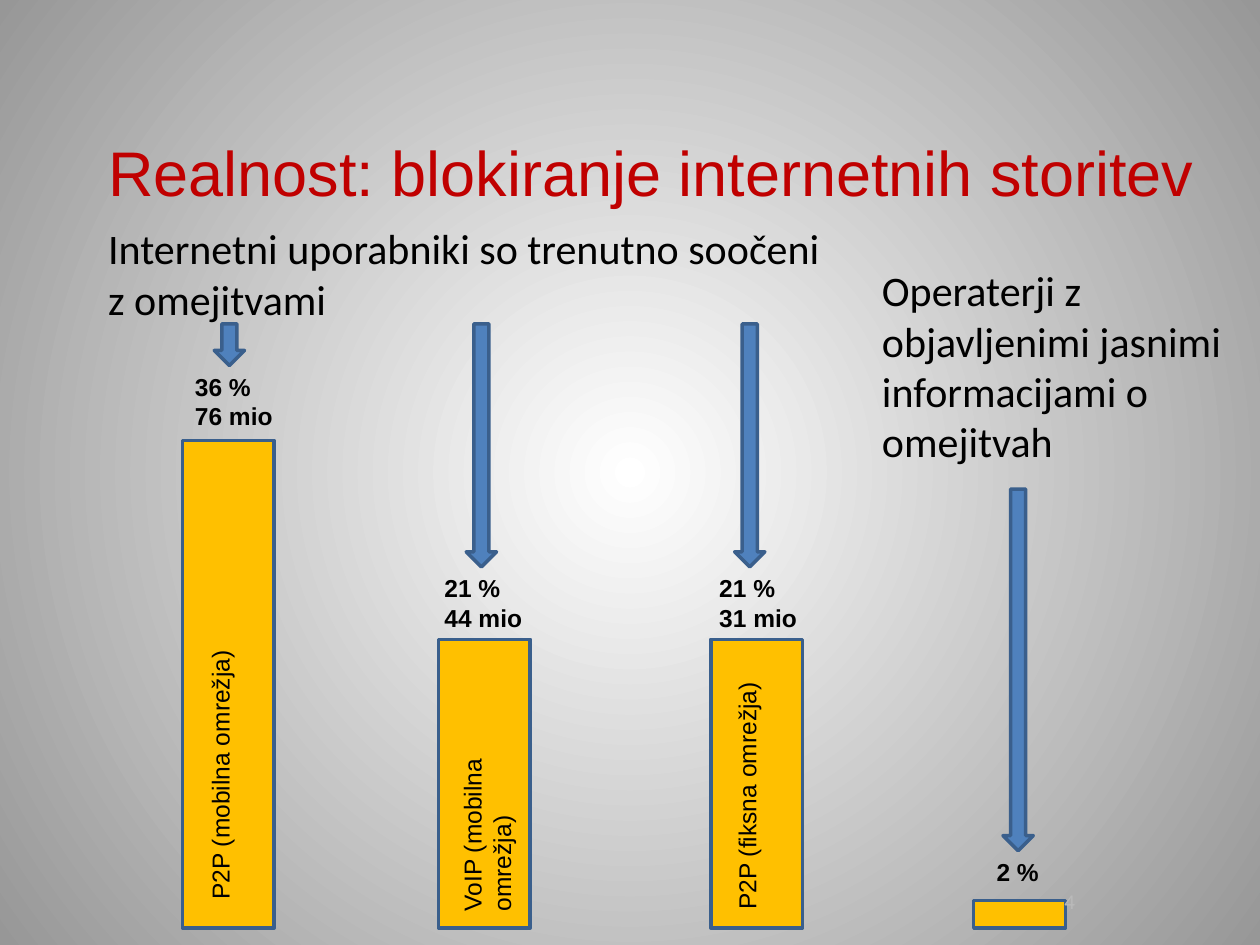
from collections import namedtuple

from lxml.etree import SubElement
from pptx import Presentation
from pptx.dml.color import RGBColor
from pptx.enum.shapes import MSO_SHAPE
from pptx.enum.text import MSO_ANCHOR, MSO_AUTO_SIZE, PP_ALIGN
from pptx.oxml.ns import qn
from pptx.util import Cm, Pt

BLACK, RED, GREY = "000000", "C00000", "BABABA"
GOLD, BLUE, OUTLINE = "FFC000", "4F81BD", "3A5F8C"
BASELINE = 18.71
BAR_WIDTH = 1.85
ARROW_WIDTH = 0.61

# Offsets are measured from the left edge of the column's bar, in cm.
Column = namedtuple(
    "Column",
    "left height arrow_offset arrow_top arrow_height "
    "figures figures_offset figures_size name name_offset name_bottom name_length")

COLUMNS = [
    Column(3.68, 9.83, 0.64, 6.53, 0.84, ["36 %", "76 mio"], 0, (2.08, 1.45),
           "P2P (mobilna omrežja)", 0.33, 18.39, 5.92),
    Column(8.84, 5.82, 0.56, 6.53, 4.90, ["21 %", "44 mio"], -0.13, (2.08, 1.45),
           "VoIP (mobilna omrežja)", 0.25, 18.62, 5.41),
    Column(14.33, 5.82, 0.48, 6.53, 4.90, ["21 %", "31 mio"], -0.08, (2.08, 1.45),
           "P2P (fiksna omrežja)", 0.30, 18.59, 5.41),
    Column(19.63, 0.56, 0.59, 9.86, 7.29, ["2 %"], 0.21, (1.37, 0.86),
           None, 0, 0, 0),
]


def rgb(color):
    return RGBColor.from_string(color)


def style_font(paragraph, name, size, color, bold=False):
    font = paragraph.font
    font.name, font.size, font.bold = name, Pt(size), bold
    font.color.rgb = rgb(color)


def add_text(slide, box, lines, name, size, color=BLACK, bold=False, wrap=True):
    text_box = slide.shapes.add_textbox(*map(Cm, box))
    frame = text_box.text_frame
    frame.word_wrap = wrap
    frame.text = "\n".join(lines)
    for paragraph in frame.paragraphs:
        style_font(paragraph, name, size, color, bold)
    return text_box


def add_outlined_shape(slide, preset, box, color):
    shape = slide.shapes.add_shape(preset, *map(Cm, box))
    shape.shadow.inherit = False
    shape.fill.solid()
    shape.fill.fore_color.rgb = rgb(color)
    shape.line.color.rgb = rgb(OUTLINE)
    shape.line.width = Pt(2)


def set_background(slide):
    """Fill the background with a radial gradient, light in the centre."""
    fill = slide.background.fill
    fill.gradient()
    for stop, position, color in zip(fill.gradient_stops, (0, 1), ("FFFFFF", "979797")):
        stop.position = position
        stop.color.rgb = rgb(color)
    gradient = next(slide.element.iter(qn("a:gradFill")))
    gradient.remove(gradient.find(qn("a:lin")))
    circle = SubElement(gradient, qn("a:path"), {"path": "circle"})
    SubElement(circle, qn("a:fillToRect"), {side: "50000" for side in "ltrb"})


def set_title(slide, box, text):
    title = slide.shapes.title
    title.left, title.top, title.width, title.height = map(Cm, box)
    frame = title.text_frame
    frame.text = text
    frame.word_wrap = False
    frame.auto_size = MSO_AUTO_SIZE.SHAPE_TO_FIT_TEXT
    frame.vertical_anchor = MSO_ANCHOR.TOP
    frame.paragraphs[0].alignment = PP_ALIGN.LEFT
    style_font(frame.paragraphs[0], "Arial", 36, RED)


def add_upward_text(slide, box, text):
    text_box = add_text(slide, box, [text], "Arial", 14)
    text_box.text_frame._txBody.bodyPr.set("vert", "eaVert")
    text_box.rotation = 180


def add_column(slide, column):
    """Stack an arrow, its figures and a bar that stands on the baseline."""
    left = column.left
    add_outlined_shape(slide, MSO_SHAPE.RECTANGLE,
                       (left, BASELINE - column.height, BAR_WIDTH, column.height), GOLD)
    add_outlined_shape(slide, MSO_SHAPE.DOWN_ARROW,
                       (left + column.arrow_offset, column.arrow_top,
                        ARROW_WIDTH, column.arrow_height), BLUE)
    figures_top = column.arrow_top + column.arrow_height
    add_text(slide, (left + column.figures_offset, figures_top, *column.figures_size),
             column.figures, "Arial", 14, bold=True, wrap=False)
    if column.name:
        add_upward_text(slide, (left + column.name_offset,
                                column.name_bottom - column.name_length,
                                1.12, column.name_length), column.name)


def add_slide_number(slide, box, number):
    text_box = add_text(slide, box, [number], "Calibri", 12, GREY)
    text_box.text_frame.vertical_anchor = MSO_ANCHOR.MIDDLE
    text_box.text_frame.paragraphs[0].alignment = PP_ALIGN.RIGHT


def main():
    presentation = Presentation()
    presentation.slide_width, presentation.slide_height = Cm(25.4), Cm(19.05)
    slide = presentation.slides.add_slide(presentation.slide_layouts[5])
    set_background(slide)
    set_title(slide, (1.93, 2.57, 22.61, 1.8), "Realnost: blokiranje internetnih storitev")
    add_text(slide, (1.93, 4.37, 15.01, 2.31),
             ["Internetni uporabniki so trenutno soočeni", "z omejitvami"], "Calibri", 24)
    add_text(slide, (17.53, 5.21, 7.39, 4.37),
             ["Operaterji z objavljenimi jasnimi informacijami o omejitvah"], "Calibri", 24)
    for column in COLUMNS:
        add_column(slide, column)
    add_slide_number(slide, (18.21, 17.65, 3.71, 1.02), "4")
    presentation.save("out.pptx")


if __name__ == "__main__":
    main()
